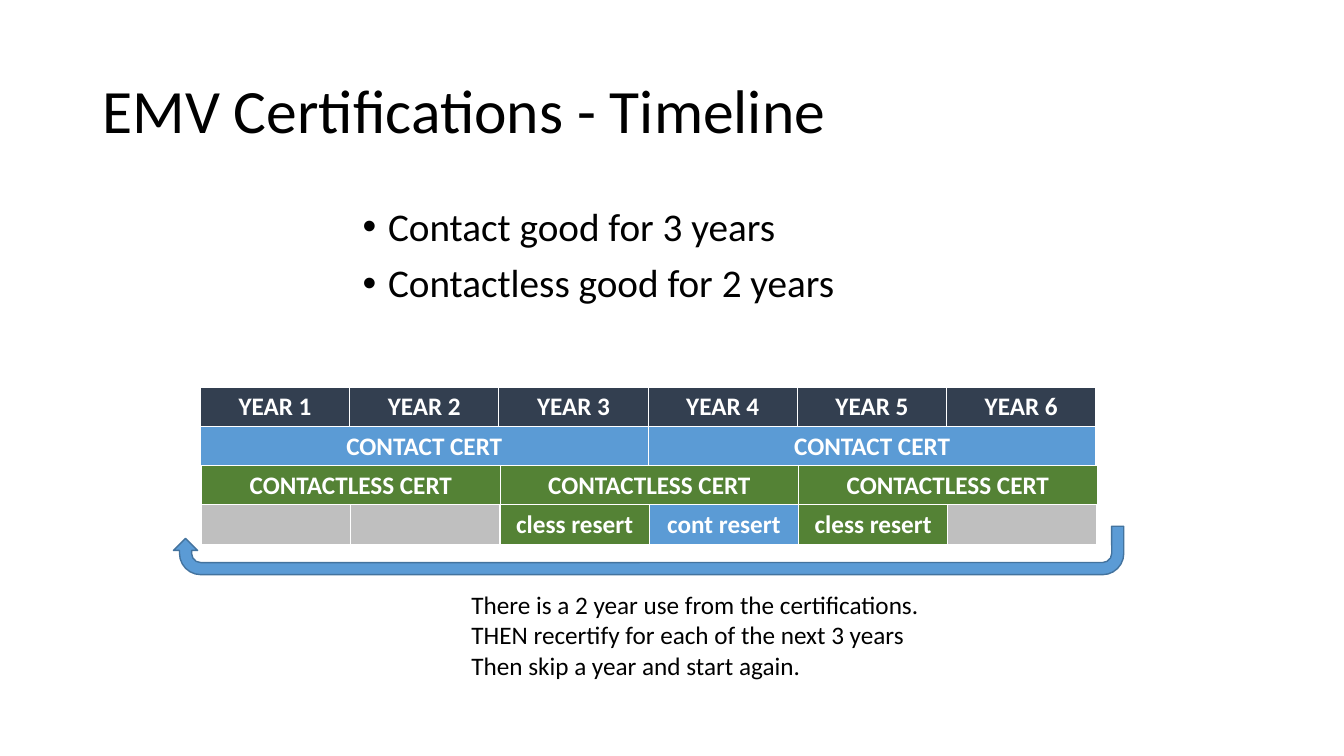
from typing import NamedTuple

from lxml.etree import SubElement
from pptx import Presentation
from pptx.dml.color import RGBColor
from pptx.enum.shapes import MSO_SHAPE
from pptx.enum.text import MSO_ANCHOR, MSO_AUTO_SIZE, PP_ALIGN
from pptx.oxml.ns import qn
from pptx.util import Cm, Pt

FONT = "Calibri"
COLORS = {
    "navy": "333F50",
    "blue": "5B9BD5",
    "edge": "43739E",
    "green": "548235",
    "gray": "BFBFBF",
    "white": "FFFFFF",
    "black": "000000",
}
BAND_TOP, BAND_STEP = 9.75, 0.99
BAND_WIDTH, BAND_HEIGHT = 22.57, 1.03


class Block(NamedTuple):
    left: float
    top: float
    width: float
    height: float
    size: int
    lines: list[str]


class Band(NamedTuple):
    left: float
    cells: list[tuple[str, str]]


def color(name: str) -> RGBColor:
    return RGBColor.from_string(COLORS[name])


def style(par, size: int, ink: str, bold: bool = False) -> None:
    par.font.size = Pt(size)
    for run in par.runs:
        run.font.name = FONT
        run.font.size = Pt(size)
        run.font.bold = bold
        run.font.color.rgb = color(ink)


def add_block(slide, block: Block):
    box = slide.shapes.add_textbox(
        Cm(block.left), Cm(block.top), Cm(block.width), Cm(block.height))
    frame = box.text_frame
    frame.word_wrap = True
    frame.text = "\n".join(block.lines)
    for par in frame.paragraphs:
        style(par, block.size, "black")
    return frame


def add_bullet(par) -> None:
    props = par._p.get_or_add_pPr()
    props.set("marL", str(Cm(0.64)))
    props.set("indent", str(-Cm(0.64)))
    SubElement(props, qn("a:buFont"), typeface="Arial")
    SubElement(props, qn("a:buChar"), char="•")


def add_border(cell) -> None:
    props = cell._tc.get_or_add_tcPr()
    for side, width in (("L", 1), ("R", 1), ("T", 1), ("B", 3)):
        line = SubElement(props, qn(f"a:ln{side}"), w=str(Pt(width)))
        fill = SubElement(line, qn("a:solidFill"))
        SubElement(fill, qn("a:srgbClr"), val=COLORS["white"])


def add_band(slide, band: Band, top: float) -> None:
    count = len(band.cells)
    table = slide.shapes.add_table(
        1, count, Cm(band.left), Cm(top), Cm(BAND_WIDTH), Cm(BAND_HEIGHT)).table
    table.first_row = table.horz_banding = False
    for col, (text, tint) in enumerate(band.cells):
        table.columns[col].width = Cm(BAND_WIDTH / count)
        cell = table.cell(0, col)
        cell.text = text
        add_border(cell)
        cell.fill.solid()
        cell.fill.fore_color.rgb = color(tint)
        par = cell.text_frame.paragraphs[0]
        par.alignment = PP_ALIGN.CENTER
        style(par, 18, "white", True)


def add_arrow(slide) -> None:
    arrow = slide.shapes.add_shape(
        MSO_SHAPE.U_TURN_ARROW, Cm(4.37), Cm(13.26), Cm(23.95), Cm(1.22))
    arrow.rotation = 180
    arrow.shadow.inherit = False
    arrow.fill.solid()
    arrow.fill.fore_color.rgb = color("blue")
    arrow.line.color.rgb = color("edge")
    arrow.line.width = Pt(1)


TITLE = Block(2.33, 1.01, 29.21, 3.68, 44, ["EMV Certifications - Timeline"])
TERMS = Block(8.89, 5.1, 14.94, 3.25, 28, [
    "Contact good for 3 years",
    "Contactless good for 2 years",
])
NOTE = Block(11.63, 14.73, 11.94, 2.57, 18, [
    "There is a 2 year use from the certifications.",
    "THEN recertify for each of the next 3 years",
    "Then skip a year and start again.",
])
BLANK = ("", "gray")
CLESS = ("cless resert", "green")
BANDS = [
    Band(5.05, [(f"YEAR {year}", "navy") for year in range(1, 7)]),
    Band(5.05, [("CONTACT CERT", "blue")] * 2),
    Band(5.08, [("CONTACTLESS CERT", "green")] * 3),
    Band(5.08, [BLANK, BLANK, CLESS, ("cont resert", "blue"), CLESS, BLANK]),
]


def main() -> None:
    deck = Presentation()
    deck.slide_width, deck.slide_height = Cm(33.87), Cm(19.05)
    slide = deck.slides.add_slide(deck.slide_layouts[6])

    # Title and validity terms
    title = add_block(slide, TITLE)
    title.vertical_anchor = MSO_ANCHOR.MIDDLE
    title.paragraphs[0].line_spacing = 0.9
    for par in add_block(slide, TERMS).paragraphs:
        par.line_spacing = 0.9
        par.space_before = Pt(10)
        add_bullet(par)

    # Timeline bands
    for row, band in enumerate(BANDS):
        add_band(slide, band, BAND_TOP + row * BAND_STEP)

    # Closing note and return arrow
    note = add_block(slide, NOTE)
    note.word_wrap = False
    note.auto_size = MSO_AUTO_SIZE.SHAPE_TO_FIT_TEXT
    add_arrow(slide)

    deck.save("out.pptx")


if __name__ == "__main__":
    main()
